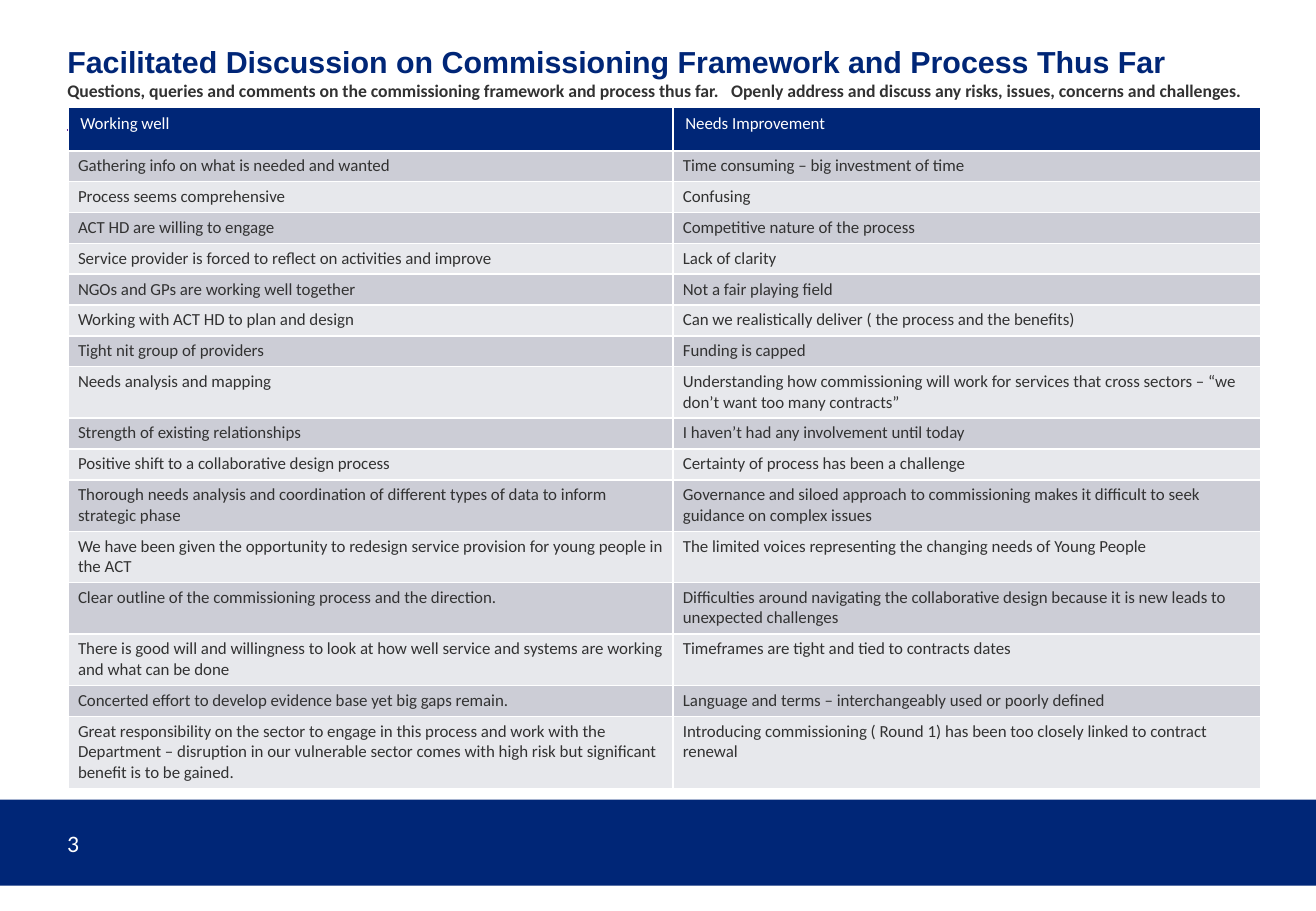
from lxml import etree
from pptx import Presentation
from pptx.dml.color import RGBColor
from pptx.enum.shapes import MSO_CONNECTOR, MSO_SHAPE
from pptx.enum.text import MSO_ANCHOR, MSO_AUTO_SIZE, PP_ALIGN
from pptx.oxml.ns import qn
from pptx.util import Inches, Pt

RECTANGLE = MSO_SHAPE.RECTANGLE
STRAIGHT = MSO_CONNECTOR.STRAIGHT
BOTTOM, MIDDLE = MSO_ANCHOR.BOTTOM, MSO_ANCHOR.MIDDLE
NO_AUTOFIT = MSO_AUTO_SIZE.NONE
LEFT = PP_ALIGN.LEFT

NAVY = RGBColor(0x00, 0x26, 0x77)
TEAL = RGBColor(0x31, 0xBF, 0xD1)
PURPLE = RGBColor(0x70, 0x30, 0xA0)
INK = RGBColor(0x32, 0x32, 0x32)
WHITE = RGBColor(0xFF, 0xFF, 0xFF)
DARK_BAND = RGBColor(0xCC, 0xCD, 0xD6)
LIGHT_BAND = RGBColor(0xE7, 0xE8, 0xEC)

COLUMNS, ROWS = 130, 90
TITLE_ONLY = 5
HEADER_HEIGHT = 4.3
ROW_PADDING, LINE_HEIGHT = 1.02, 2.03
SENTENCE_GAP = Pt(4.75)

HEADER = ("Working well", "Needs Improvement")
FEEDBACK = [
    (1, "Gathering info on what is needed and wanted",
     "Time consuming – big investment of time"),
    (1, "Process seems comprehensive", "Confusing"),
    (1, "ACT HD are willing to engage", "Competitive nature of the process"),
    (1, "Service provider is forced to reflect on activities and improve",
     "Lack of clarity"),
    (1, "NGOs and GPs are working well together", "Not a fair playing field"),
    (1, "Working with ACT HD to plan and design",
     "Can we realistically deliver ( the process and the benefits)"),
    (1, "Tight nit group of providers", "Funding is capped"),
    (2, "Needs analysis and mapping",
     "Understanding how commissioning will work for services that cross "
     "sectors – “we don’t want too many contracts”"),
    (1, "Strength of existing relationships",
     "I haven’t had any involvement until today"),
    (1, "Positive shift to a collaborative design process",
     "Certainty of process has been a challenge"),
    (2, "Thorough needs analysis and coordination of different types of data "
     "to inform strategic phase",
     "Governance and siloed approach to commissioning makes it difficult to "
     "seek guidance on complex issues"),
    (2, "We have been given the opportunity to redesign service provision for "
     "young people in the ACT",
     "The limited voices representing the changing needs of Young People"),
    (2, "Clear outline of the commissioning process and the direction.",
     "Difficulties around navigating the collaborative design because it is "
     "new leads to unexpected challenges"),
    (2, "There is good will and willingness to look at how well service and "
     "systems are working and what can be done",
     "Timeframes are tight and tied to contracts dates"),
    (1, "Concerted effort to develop evidence base yet big gaps remain.",
     "Language and terms – interchangeably used or poorly defined"),
    (3, "Great responsibility on the sector to engage in this process and work "
     "with the Department – disruption in our vulnerable sector comes with "
     "high risk but significant benefit is to be gained.",
     "Introducing commissioning ( Round 1) has been too closely linked to "
     "contract renewal"),
]


class SlideBuilder:
    """Draws styled elements on one slide, measured in grid columns and rows."""

    def __init__(self, prs):
        self.col = prs.slide_width / COLUMNS
        self.row = prs.slide_height / ROWS
        self.s = prs.slides.add_slide(prs.slide_layouts[TITLE_ONLY])

    def box(self, x, y, w, h):
        return (round(x * self.col), round(y * self.row),
                round(w * self.col), round(h * self.row))

    def run(self, p, text, size, color, font="Calibri", bold=False):
        r = p.add_run()
        r.text = text
        r.font.size, r.font.name, r.font.bold = Pt(size), font, bold
        r.font.color.rgb = color
        return r

    def title(self, heading, sentences, *grid):
        sp = self.s.shapes.title
        sp.left, sp.top, sp.width, sp.height = self.box(*grid)
        tf = sp.text_frame
        tf.word_wrap, tf.auto_size = True, NO_AUTOFIT
        tf.vertical_anchor = BOTTOM
        p = tf.paragraphs[0]
        p.alignment = LEFT
        self.run(p, heading, 18, NAVY, "Arial", True)
        p.add_line_break()
        first, second = sentences
        self.run(p, first, 10.5, INK, bold=True)
        gap = self.run(p, " ", 10.5, INK, bold=True)
        gap._r.get_or_add_rPr().set("spc", str(round(SENTENCE_GAP.pt * 100)))
        self.run(p, second, 10.5, INK, bold=True)

    def band(self, *grid):
        sp = self.s.shapes.add_shape(RECTANGLE, *self.box(*grid))
        sp.shadow.inherit = False
        sp.fill.solid()
        sp.fill.fore_color.rgb = NAVY
        sp.line.fill.background()

    def rule(self, color, width, x, y, length):
        left, top, w, _ = self.box(x, y, length, 0)
        sp = self.s.shapes.add_connector(STRAIGHT, left, top, left + w, top)
        sp.line.color.rgb = color
        sp.line.width = Pt(width)
        etree.SubElement(sp._element.spPr, qn("a:effectLst"))

    def text(self, text, size, color, *grid):
        tf = self.s.shapes.add_textbox(*self.box(*grid)).text_frame
        tf.word_wrap = True
        tf.vertical_anchor = MIDDLE
        self.run(tf.paragraphs[0], text, size, color)

    def cell(self, cell, text, color, fill):
        tc_pr = cell._tc.get_or_add_tcPr()
        for side in "LRTB":
            ln = etree.SubElement(tc_pr, qn("a:ln" + side), w=str(Pt(1)))
            solid = etree.SubElement(ln, qn("a:solidFill"))
            etree.SubElement(solid, qn("a:srgbClr"), val=str(WHITE))
        cell.fill.solid()
        cell.fill.fore_color.rgb = fill
        self.run(cell.text_frame.paragraphs[0], text, 10, color)

    def table(self, header, rows, widths, x, y):
        heights = [HEADER_HEIGHT]
        heights += [ROW_PADDING + LINE_HEIGHT * lines for lines, *_ in rows]
        grid = self.box(x, y, sum(widths), sum(heights))
        table = self.s.shapes.add_table(len(heights), len(widths), *grid).table
        for column, width in zip(table.columns, widths):
            column.width = round(width * self.col)
        for row, height in zip(table.rows, heights):
            row.height = round(height * self.row)
        for c, text in enumerate(header):
            self.cell(table.cell(0, c), text, WHITE, NAVY)
        for i, (_, *texts) in enumerate(rows):
            fill = LIGHT_BAND if i % 2 else DARK_BAND
            for c, text in enumerate(texts):
                cell = table.cell(i + 1, c)
                cell.margin_left = cell.margin_right = Inches(0.08)
                cell.margin_top = cell.margin_bottom = Inches(0.04)
                self.cell(cell, text, INK, fill)


def main():
    prs = Presentation()
    prs.slide_width, prs.slide_height = Inches(10.83), Inches(7.5)
    slide = SlideBuilder(prs)
    slide.band(0, 79, COLUMNS, 8.5)
    for color, width in ((TEAL, 1), (PURPLE, 0.75)):
        slide.rule(color, width, 6.6, 12.84, 116.8)
    slide.title(
        "Facilitated Discussion on Commissioning Framework and Process Thus Far",
        ("Questions, queries and comments on the commissioning framework and "
         "process thus far.",
         "Openly address and discuss any risks, issues, concerns and "
         "challenges."),
        5.45, 1.3, 120, 9.25)
    slide.table(HEADER, FEEDBACK, (59.75, 58), 6.75, 10.6)
    slide.text("3", 14, WHITE, 5.45, 80.9, 36, 4.8)
    prs.save("out.pptx")


if __name__ == "__main__":
    main()
